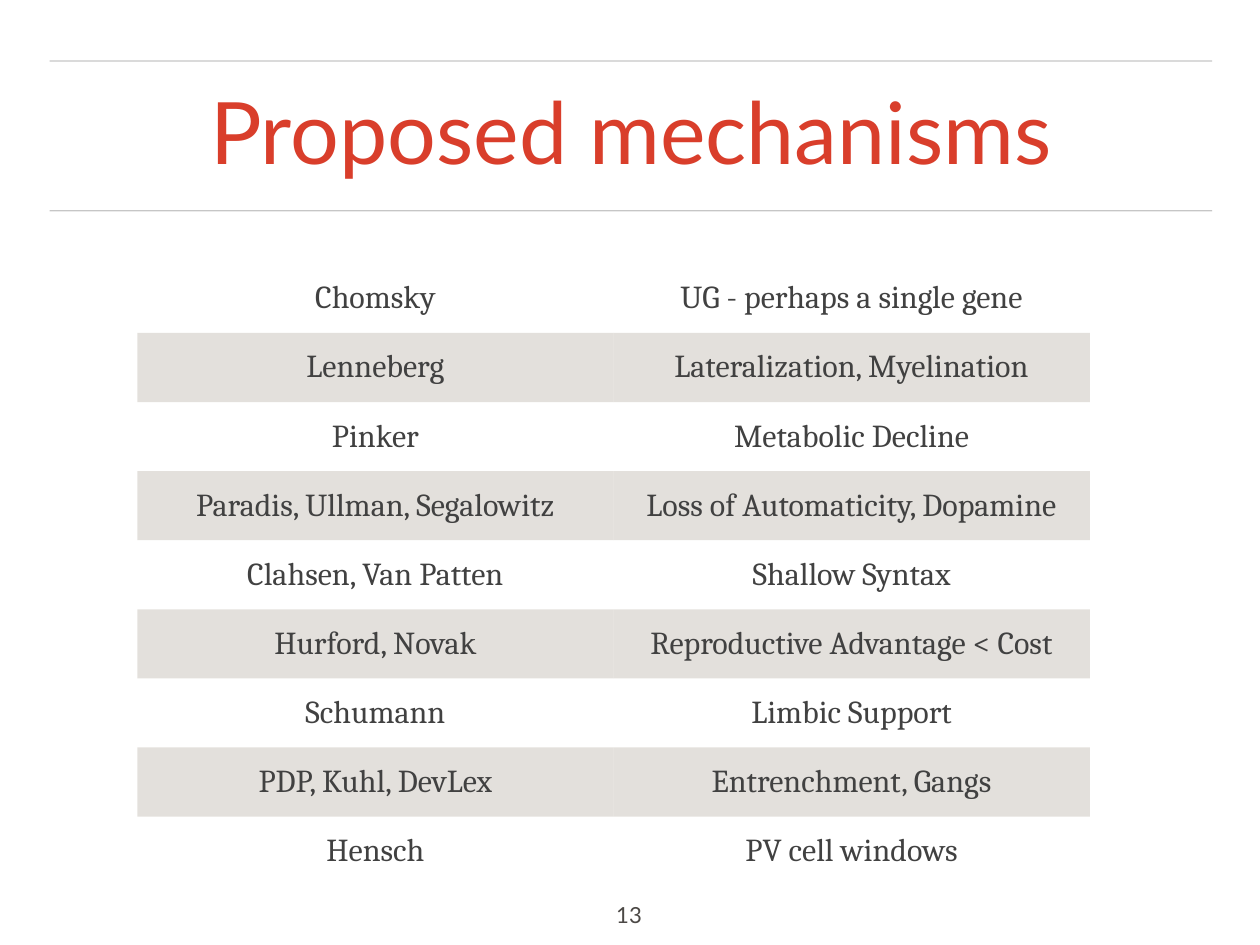
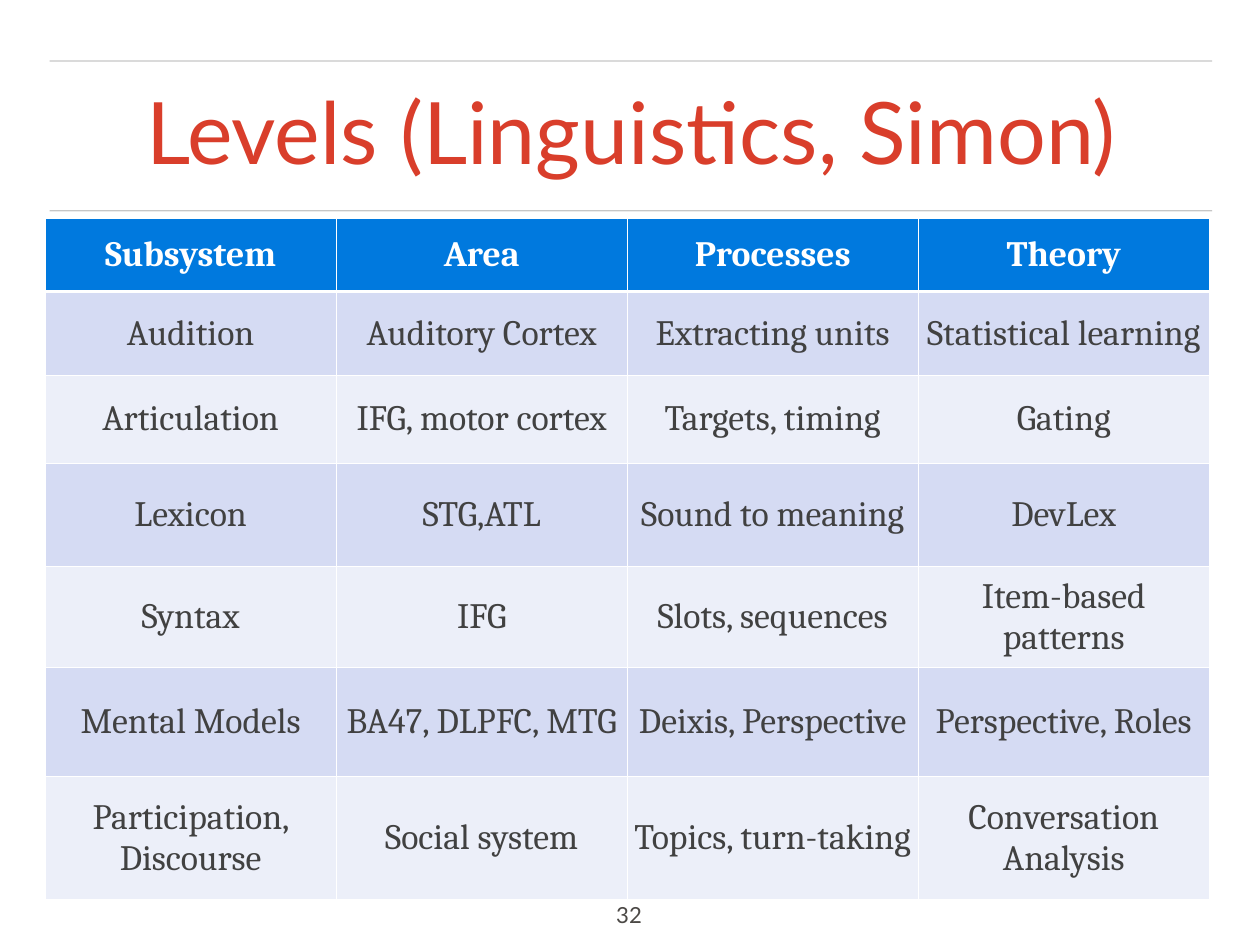
from lxml import etree
from pptx import Presentation
from pptx.dml.color import RGBColor
from pptx.enum import shapes, text as txt
from pptx.oxml.ns import qn
from pptx.util import Inches, Pt

RED, GREY, INK, STONE = "D93E2B", "444444", "414141", "C9C3BA"
WHITE, BLUE, BANDS = "FFFFFF", "0079DE", ("ECEFF9", "D5DBF3")
HEAD, BODY = "Lato", "Cambria"
LEFT, RIGHT = 0.56, 13.68
NO_STYLE = "{2D5ABB26-0587-4C30-8999-92F81FD0307C}"

MECHANISMS = [
    ("Chomsky", "UG - perhaps a single gene"),
    ("Lenneberg", "Lateralization, Myelination"),
    ("Pinker", "Metabolic Decline"),
    ("Paradis, Ullman, Segalowitz", "Loss of Automaticity, Dopamine"),
    ("Clahsen, Van Patten", "Shallow Syntax"),
    ("Hurford, Novak", "Reproductive Advantage < Cost"),
    ("Schumann", "Limbic Support"),
    ("PDP, Kuhl, DevLex", "Entrenchment, Gangs"),
    ("Hensch", "PV cell windows"),
]
LEVELS = [
    ("Subsystem", "Area", "Processes", "Theory"),
    ("Audition", "Auditory Cortex", "Extracting units", "Statistical learning"),
    ("Articulation", "IFG, motor cortex", "Targets, timing", "Gating"),
    ("Lexicon", "STG,ATL", "Sound to meaning", "DevLex"),
    ("Syntax", "IFG", "Slots, sequences", "Item-based patterns"),
    ("Mental Models", "BA47, DLPFC, MTG", "Deixis, Perspective", "Perspective, Roles"),
    ("Participation, Discourse", "Social system", "Topics, turn-taking",
     "Conversation Analysis"),
]


def rgb(code):
    return RGBColor.from_string(code)


def fade(node, percent):
    """Make every colour under the XML node partly transparent."""
    for colour in node.iter(qn("a:srgbClr")):
        etree.SubElement(colour, qn("a:alpha"), val=str(percent * 1000))


def write(frame, text, size, color, font=BODY, bold=False, spacing=None, indent=0):
    para = frame.paragraphs[0]
    para.alignment = txt.PP_ALIGN.CENTER
    para.line_spacing = spacing
    if indent:
        for side in ("marL", "marR"):
            para._p.get_or_add_pPr().set(side, str(Inches(indent)))
    run = para.add_run()
    run.text = text
    run.font.name, run.font.size, run.font.bold = font, Pt(size), bold
    run.font.color.rgb = rgb(color)


def pad(box, inset):
    """Give a text frame or a table cell the same margin on all sides."""
    box.margin_left = box.margin_right = Inches(inset)
    box.margin_top = box.margin_bottom = Inches(inset)


def add_rule(slide, y):
    rule = slide.shapes.add_connector(
        shapes.MSO_CONNECTOR.STRAIGHT,
        Inches(LEFT), Inches(y), Inches(RIGHT), Inches(y))
    rule.line.color.rgb = rgb(GREY)
    rule.line.width = Pt(1)
    fade(rule._element.spPr, 30)
    etree.SubElement(rule._element.spPr, qn("a:effectLst"))


def add_slide(deck, heading, number):
    slide = deck.slides.add_slide(deck.slide_layouts[5])
    for y in (2.38, 0.69):
        add_rule(slide, y)

    title = slide.shapes.title
    title.left, title.top = Inches(LEFT), Inches(0.88)
    title.width, title.height = Inches(RIGHT - LEFT), Inches(1.33)
    frame = title.text_frame
    frame.auto_size = txt.MSO_AUTO_SIZE.NONE
    frame.vertical_anchor = txt.MSO_ANCHOR.MIDDLE
    pad(frame, 0.06)
    write(frame, heading, size=70, color=RED, font=HEAD, spacing=0.9)

    box = slide.shapes.add_textbox(
        Inches(6.8), Inches(10.12), Inches(0.6), Inches(0.44))
    pad(box.text_frame, 0.06)
    box.text_frame.word_wrap = True
    write(box.text_frame, str(number), size=18, color="4C4946", font=HEAD)
    return slide


def add_grid(slide, rows, left, top, width, heights):
    """Add an unstyled table with equal columns."""
    cols = len(rows[0])
    table = slide.shapes.add_table(
        len(rows), cols, Inches(left), Inches(top),
        Inches(width), Inches(sum(heights))).table
    table.first_row = table.horz_banding = False
    table._tbl.tblPr.find(qn("a:tableStyleId")).text = NO_STYLE
    for col in table.columns:
        col.width = Inches(width / cols)
    for row, height in zip(table.rows, heights):
        row.height = Inches(height)
    return table


def set_cell(cell, text, inset, fill=None, alpha=None, **style):
    cell.vertical_anchor = txt.MSO_ANCHOR.MIDDLE
    pad(cell, inset)
    if fill:
        cell.fill.solid()
        cell.fill.fore_color.rgb = rgb(fill)
    else:
        cell.fill.background()
    if alpha:
        fade(cell._tc.tcPr, alpha)
    write(cell.text_frame, text, **style)


def edge(cell, top, bottom):
    """Draw white cell borders; call before the cell is filled."""
    props = cell._tc.get_or_add_tcPr()
    for side, width in zip("LRTB", (1, 1, top, bottom)):
        line = etree.SubElement(props, qn(f"a:ln{side}"), w=str(Pt(width)))
        paint = etree.SubElement(line, qn("a:solidFill"))
        etree.SubElement(paint, qn("a:srgbClr"), val=WHITE)


def add_mechanisms(deck):
    slide = add_slide(deck, "Proposed mechanisms", 13)
    table = add_grid(slide, MECHANISMS, 1.55, 2.98, 10.75, [0.78] * len(MECHANISMS))
    for r, row in enumerate(MECHANISMS):
        shade = {"fill": STONE, "alpha": 50} if r % 2 else {}
        for c, text in enumerate(row):
            set_cell(table.cell(r, c), text, 0.06, size=26, color=INK, **shade)


def add_levels(deck):
    slide = add_slide(deck, "Levels (Linguistics, Simon)", 32)
    heights = [0.82, 0.95, 0.99, 1.17, 1.14, 1.23, 1.39]
    table = add_grid(slide, LEVELS, 0.51, 2.47, 13.14, heights)
    for r, row in enumerate(LEVELS):
        top = r == 0
        for c, text in enumerate(row):
            cell = table.cell(r, c)
            edge(cell, top=3 if r == 1 else 1, bottom=3 if top else 1)
            set_cell(cell, text, 0, fill=BLUE if top else BANDS[r % 2],
                     size=29, color=WHITE if top else INK, bold=top, indent=0.07)


def main():
    deck = Presentation()
    deck.slide_width, deck.slide_height = Inches(14.22), Inches(10.67)
    add_mechanisms(deck)
    add_levels(deck)
    deck.save("out.pptx")


if __name__ == "__main__":
    main()
